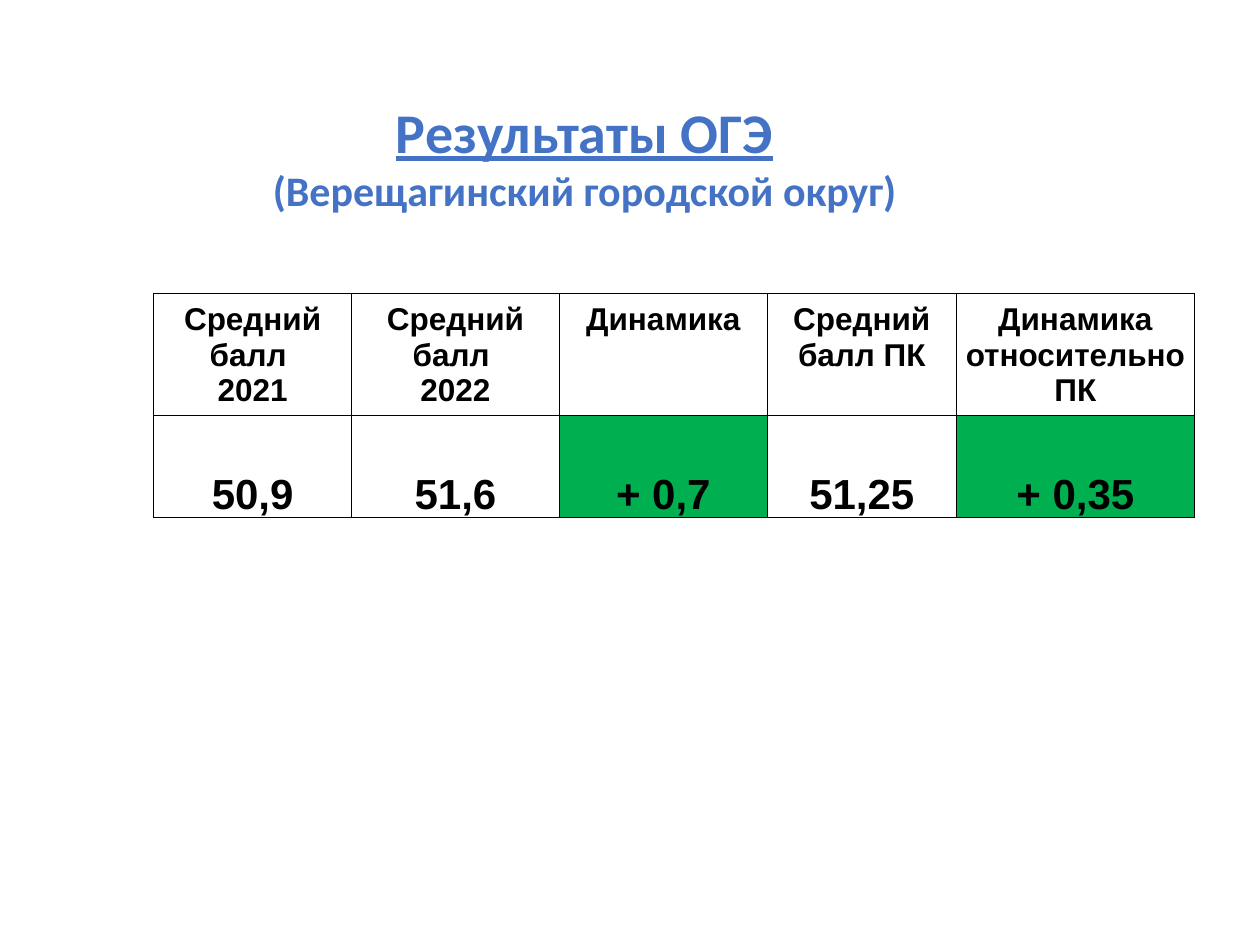
from dataclasses import dataclass

from lxml.etree import SubElement
from pptx import Presentation
from pptx.dml.color import RGBColor
from pptx.enum.text import MSO_ANCHOR, MSO_AUTO_SIZE, PP_ALIGN
from pptx.oxml.ns import qn
from pptx.util import Inches, Pt


@dataclass(frozen=True)
class Theme:
    blue: str = "4472C4"
    black: str = "000000"
    white: str = "FFFFFF"
    green: str = "00B050"
    head: str = "Calibri"
    body: str = "Arial"
    title: int = 32
    large: int = 24
    small: int = 18
    border: float = 0.5


THEME = Theme()
WIDTHS = [1.57, 1.65, 1.65, 1.5, 1.89]
HEIGHTS = [0.91, 0.81]
HEADS = [
    ["Средний балл ", "2021"],
    ["Средний балл ", "2022"],
    ["Динамика"],
    ["Средний балл ПК"],
    ["Динамика относительно ПК"],
]
SCORES = ["50,9", "51,6", "+ 0,7", "51,25", "+ 0,35"]


def write(para, text, *, size, font, color, underline=False):
    para.alignment = PP_ALIGN.CENTER
    run = para.add_run()
    run.text = text
    run.font.size = Pt(size)
    run.font.name = font
    run.font.bold = True
    run.font.underline = underline
    run.font.color.rgb = RGBColor.from_string(color)


def add_title(slide):
    title = slide.shapes.title
    title.left, title.top = Inches(1.69), Inches(0.72)
    title.width, title.height = Inches(5.9), Inches(1.04)
    frame = title.text_frame
    frame.word_wrap = True
    frame.auto_size = MSO_AUTO_SIZE.SHAPE_TO_FIT_TEXT
    frame.vertical_anchor = MSO_ANCHOR.TOP
    style = {"font": THEME.head, "color": THEME.blue}
    write(frame.paragraphs[0], "Результаты ОГЭ",
          size=THEME.title, underline=True, **style)
    write(frame.add_paragraph(), "(Верещагинский городской округ)",
          size=THEME.large, **style)


def add_border(cell):
    props = cell._tc.get_or_add_tcPr()
    for side in ("a:lnL", "a:lnR", "a:lnT", "a:lnB"):
        line = SubElement(props, qn(side), w=str(Pt(THEME.border)))
        fill = SubElement(line, qn("a:solidFill"))
        SubElement(fill, qn("a:srgbClr"), val=THEME.black)


def fill_cell(cell, lines, *, size, fill, anchor, top):
    add_border(cell)
    cell.fill.solid()
    cell.fill.fore_color.rgb = RGBColor.from_string(fill)
    cell.vertical_anchor = anchor
    cell.margin_left = cell.margin_right = Inches(0.01)
    cell.margin_top, cell.margin_bottom = Inches(top), 0
    frame = cell.text_frame
    for i, text in enumerate(lines):
        para = frame.add_paragraph() if i else frame.paragraphs[0]
        write(para, text, size=size, font=THEME.body, color=THEME.black)


def add_scores(slide):
    table = slide.shapes.add_table(
        len(HEIGHTS), len(WIDTHS), Inches(1.22), Inches(2.33),
        Inches(sum(WIDTHS)), Inches(sum(HEIGHTS))).table
    for row, height in zip(table.rows, HEIGHTS):
        row.height = Inches(height)
    for i, (width, head, score) in enumerate(zip(WIDTHS, HEADS, SCORES)):
        table.columns[i].width = Inches(width)
        fill_cell(table.cell(0, i), head, size=THEME.small,
                  fill=THEME.white, anchor=MSO_ANCHOR.TOP, top=0.07)
        gain = score.startswith("+")
        fill_cell(table.cell(1, i), [score], size=THEME.large,
                  fill=THEME.green if gain else THEME.white,
                  anchor=MSO_ANCHOR.BOTTOM, top=0.01)


def main():
    deck = Presentation()
    deck.slide_width, deck.slide_height = Inches(10), Inches(7.5)
    slide = deck.slides.add_slide(deck.slide_layouts[5])
    add_title(slide)
    add_scores(slide)
    deck.save("out.pptx")


if __name__ == "__main__":
    main()
